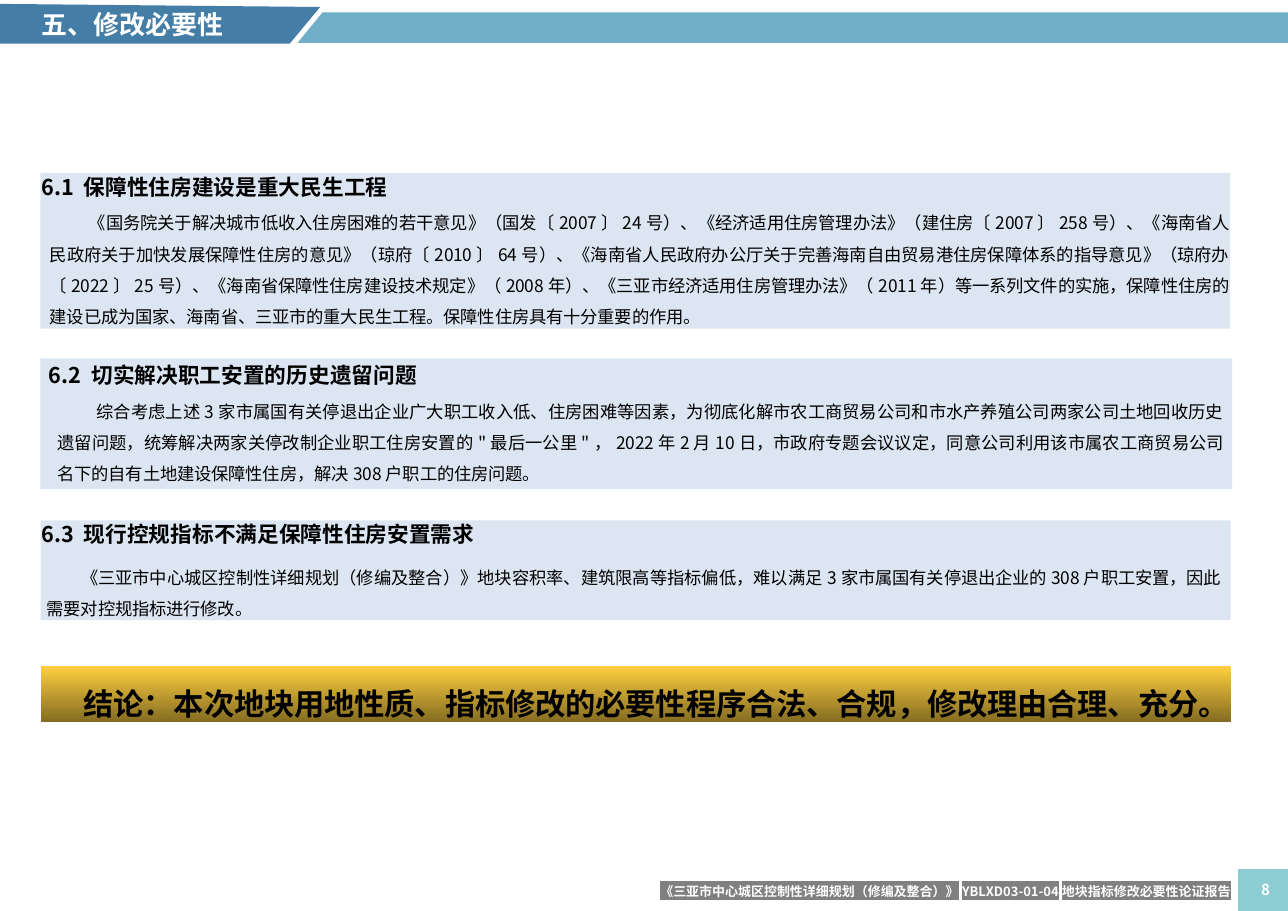
from pptx import Presentation
from pptx.dml.color import RGBColor
from pptx.enum.shapes import MSO_SHAPE
from pptx.enum.text import MSO_ANCHOR, MSO_AUTO_SIZE, PP_ALIGN
from pptx.oxml.ns import qn
from pptx.util import Inches, Pt
from lxml.etree import SubElement

COLORS = {
    "panel": "DCE6F2", "band": "71AFC8", "tab": "447EA7", "corner": "8BCDD2",
    "gold": "FECF40", "bronze": "846C21", "highlight": "808080",
    "black": "000000", "white": "FFFFFF",
}
FONT = "Noto Sans CJK SC"
TIGHT = -10
MM_PER_INCH = 25.4
PAGE_WIDTH, PAGE_HEIGHT = 420 / MM_PER_INCH, 297 / MM_PER_INCH
LEFT, WIDTH = 0.52, 15.28

POLICY = (
    "《国务院关于解决城市低收入住房困难的若干意见》（国发〔2007〕24号）、"
    "《经济适用住房管理办法》（建住房〔2007〕258号）、"
    "《海南省人民政府关于加快发展保障性住房的意见》（琼府〔2010〕64号）、"
    "《海南省人民政府办公厅关于完善海南自由贸易港住房保障体系的指导意见》（琼府办〔2022〕25号）、"
    "《海南省保障性住房建设技术规定》（2008年）、"
    "《三亚市经济适用住房管理办法》（2011年）等一系列文件的实施，"
    "保障性住房的建设已成为国家、海南省、三亚市的重大民生工程。保障性住房具有十分重要的作用。"
)
RESETTLEMENT = (
    "综合考虑上述3家市属国有关停退出企业广大职工收入低、住房困难等因素，"
    "为彻底化解市农工商贸易公司和市水产养殖公司两家公司土地回收历史遗留问题，"
    "统筹解决两家关停改制企业职工住房安置的\"最后一公里\"，"
    "2022年2月10日，市政府专题会议议定，同意公司利用该市属农工商贸易公司名下的自有土地建设保障性住房，"
    "解决308户职工的住房问题。"
)
INDICATORS = "《三亚市中心城区控制性详细规划（修编及整合）》地块容积率、建筑限高等指标偏低，难以满足"
DEMAND = "3家市属国有关停退出企业的308户职工安置，因此需要对控规指标进行修改。"
FOOTER = "《三亚市中心城区控制性详细规划（修编及整合）》YBLXD03-01-04地块指标修改必要性论证报告"


def rgb(name):
    """Return the palette colour with this name."""
    return RGBColor.from_string(COLORS[name])


def add_run(paragraph, text, size, color="black", bold=True, font=FONT, spacing=0, highlight=None):
    """Add one formatted run to a paragraph."""
    run = paragraph.add_run()
    run.text = text
    run.font.size, run.font.bold = Pt(size), bold
    run.font.color.rgb = rgb(color)
    properties = run.font._element
    if spacing:
        properties.set("spc", str(spacing))
    if highlight:
        mark = SubElement(properties, qn("a:highlight"))
        SubElement(mark, qn("a:srgbClr")).set("val", COLORS[highlight])
    run.font.name = font
    SubElement(properties, qn("a:ea")).set("typeface", FONT)


def format_paragraph(paragraph, before, margin=0.01, indent=0, line=None, align=PP_ALIGN.LEFT):
    """Set spacing, indents and alignment of a paragraph."""
    paragraph.alignment = align
    paragraph.space_before = Pt(before)
    if line:
        paragraph.line_spacing = line
    properties = paragraph._p.get_or_add_pPr()
    properties.set("marL", str(Inches(margin)))
    properties.set("indent", str(Inches(indent)))


def prepare_frame(shape, side=0, top=0.01, bottom=0):
    """Set margins, wrapping and anchor, and return the text frame."""
    frame = shape.text_frame
    frame.word_wrap = True
    frame.auto_size = MSO_AUTO_SIZE.SHAPE_TO_FIT_TEXT
    frame.vertical_anchor = MSO_ANCHOR.TOP
    frame.margin_left = frame.margin_right = Inches(side)
    frame.margin_top, frame.margin_bottom = Inches(top), Inches(bottom)
    return frame


def add_box(slide, left, top, width, height):
    """Add a plain rectangle without outline or shadow."""
    shape = slide.shapes.add_shape(
        MSO_SHAPE.RECTANGLE, Inches(left), Inches(top), Inches(width), Inches(height))
    shape.shadow.inherit = False
    shape.line.fill.background()
    return shape


def add_panel(slide, box, heading, runs, body, **margins):
    """Add a section panel with a heading and a body paragraph."""
    shape = add_box(slide, *box)
    shape.fill.solid()
    shape.fill.fore_color.rgb = rgb("panel")
    frame = prepare_frame(shape, **margins)
    title = frame.paragraphs[0]
    format_paragraph(title, 1)
    add_run(title, heading, 20)
    paragraph = frame.add_paragraph()
    format_paragraph(paragraph, line=1.5, **body)
    for text, font, spacing in runs:
        add_run(paragraph, text, 16, bold=False, font=font, spacing=spacing)


def add_outline(slide, points, color):
    """Add a filled polygon through the given points."""
    corners = [(Inches(x), Inches(y)) for x, y in points]
    builder = slide.shapes.build_freeform(*corners[0], scale=1.0)
    builder.add_line_segments(corners[1:], close=True)
    shape = builder.convert_to_shape()
    shape.shadow.inherit = False
    shape.fill.solid()
    shape.fill.fore_color.rgb = rgb(color)
    shape.line.fill.background()


def add_label(slide, box, text, size, before, inset, margin=0.01, align=PP_ALIGN.LEFT, highlight=None):
    """Add a white bold one-line label."""
    shape = slide.shapes.add_textbox(*map(Inches, box))
    paragraph = prepare_frame(shape, top=inset).paragraphs[0]
    format_paragraph(paragraph, before, margin, align=align)
    add_run(paragraph, text, size, "white", highlight=highlight)


def add_conclusion(slide):
    """Add the gradient bar with the conclusion."""
    shape = add_box(slide, LEFT, 8.55, WIDTH, 0.72)
    shape.fill.gradient()
    shape.fill.gradient_angle = 270
    for stop, color, position in zip(shape.fill.gradient_stops, ("gold", "bronze"), (0, 1)):
        stop.color.rgb = rgb(color)
        stop.position = position
    paragraph = prepare_frame(shape).paragraphs[0]
    format_paragraph(paragraph, 9, 0.08, 0.44, 1.5, PP_ALIGN.CENTER)
    add_run(paragraph, "结论：", 28)
    add_run(paragraph, "本次地块用地性质、指标修改的必要性程序合法、合规，修改理由合理、充分。", 28, spacing=TIGHT)


def main():
    """Build the slide and save it."""
    presentation = Presentation()
    presentation.slide_width, presentation.slide_height = Inches(PAGE_WIDTH), Inches(PAGE_HEIGHT)
    slide = presentation.slides.add_slide(presentation.slide_layouts[6])

    justified = {"before": 2.4, "margin": 0.12, "indent": 0.5, "align": PP_ALIGN.JUSTIFY}
    add_panel(slide, (LEFT, 2.22, 15.27, 2), "6.1 保障性住房建设是重大民生工程",
              [(POLICY, FONT, TIGHT)], justified)
    add_panel(slide, (LEFT, 4.6, 15.3, 1.68), "6.2 切实解决职工安置的历史遗留问题",
              [(RESETTLEMENT, FONT, TIGHT)], justified, side=0.1, top=0.05, bottom=0.05)
    add_outline(slide, [(PAGE_WIDTH, 0.16), (4.14, 0.16), (3.82, 0.55), (PAGE_WIDTH, 0.55)], "band")
    add_outline(slide, [(0, 0.05), (0, 0.56), (3.72, 0.56), (4.11, 0.09)], "tab")
    add_label(slide, (LEFT, 0.1, 3.24, 0.42), "五、修改必要性", 24, 1, 0.01)
    add_panel(slide, (LEFT, 6.68, WIDTH, 1.28), "6.3 现行控规指标不满足保障性住房安置需求",
              [(INDICATORS, "Calibri", 0), (DEMAND, FONT, TIGHT)],
              {"before": 9, "margin": 0.08, "indent": 0.44})
    add_outline(slide, [(PAGE_WIDTH, 11.15), (15.89, 11.15),
                        (15.89, PAGE_HEIGHT), (PAGE_WIDTH, PAGE_HEIGHT)], "corner")
    add_label(slide, (16.16, 11.27, 0.18, 0.29), "8", 14, 1.9, 0.03, 0.03)
    add_label(slide, (7.1, 11.32, 8.7, 0.23), FOOTER, 12, 1.7, 0.02,
              align=PP_ALIGN.RIGHT, highlight="highlight")
    add_conclusion(slide)
    presentation.save("out.pptx")


if __name__ == "__main__":
    main()
